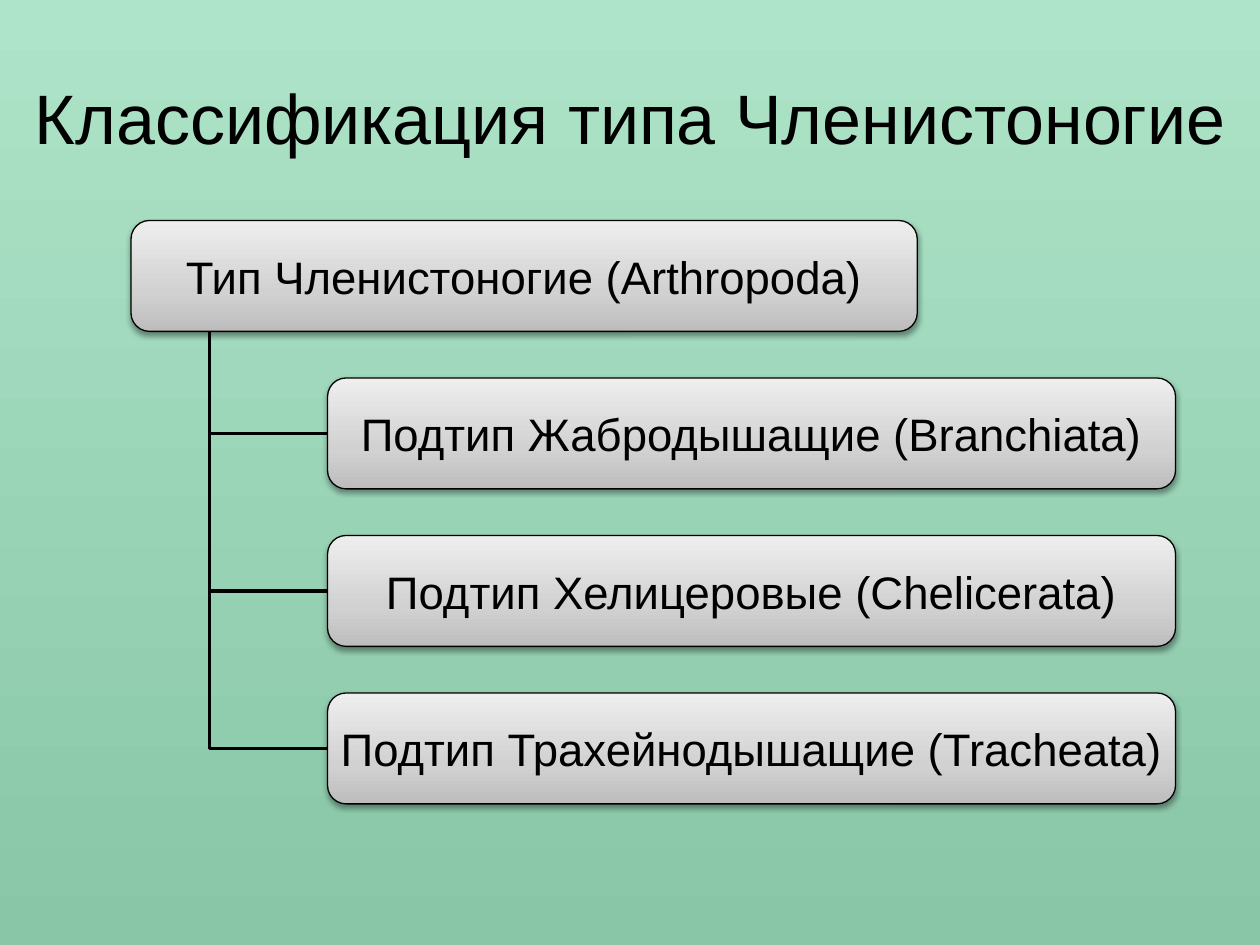
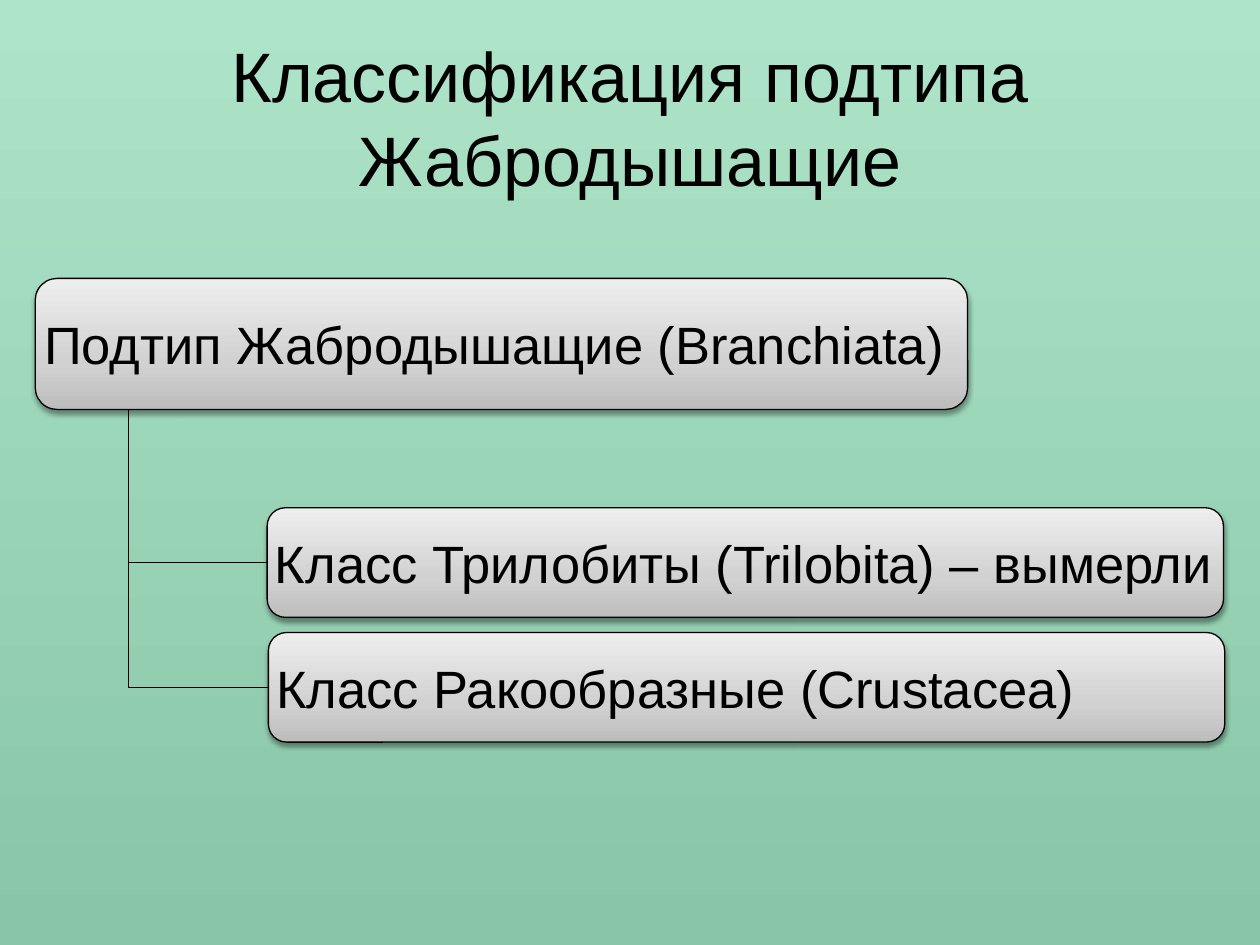
from copy import deepcopy

from lxml import etree
from pptx import Presentation
from pptx.dml.color import RGBColor
from pptx.enum import shapes, text
from pptx.oxml.ns import qn
from pptx.util import Inches, Pt

BLACK = RGBColor(0x00, 0x00, 0x00)
BACKDROP = [(0, RGBColor(0xAE, 0xE4, 0xC9)), (1, RGBColor(0x88, 0xC6, 0xA7))]
SILVER = [(0, RGBColor(0xBD, 0xBD, 0xBD)), (0.35, RGBColor(0xD1, 0xD1, 0xD1)),
          (1, RGBColor(0xEE, 0xEE, 0xEE))]
FONT = "Arial"
TITLE_ONLY = 5


def write_text(frame, words, size, align=text.PP_ALIGN.CENTER, inset=None):
    """Fill a text frame with one paragraph of black text, centred vertically."""
    frame.word_wrap = True
    frame.auto_size = text.MSO_AUTO_SIZE.NONE
    frame.vertical_anchor = text.MSO_ANCHOR.MIDDLE
    if inset is not None:
        frame.margin_left = frame.margin_right = Inches(inset)
        frame.margin_top = frame.margin_bottom = Inches(inset)
    para = frame.paragraphs[0]
    para.alignment = align
    span = para.add_run()
    span.text = words
    span.font.name, span.font.size = FONT, Pt(size)
    span.font.color.rgb = BLACK


def paint_gradient(fill, element, stops, angle):
    """Paint a linear gradient; the angle runs counter-clockwise."""
    fill.gradient()
    fill.gradient_angle = angle
    stop_list = next(element.iter(qn("a:gsLst")))
    while len(stop_list) < len(stops):
        stop_list.append(deepcopy(stop_list[-1]))
    for stop, (position, color) in zip(fill.gradient_stops, stops):
        stop.position = position
        stop.color.rgb = color


def add_soft_shadow(shape):
    shape.shadow.inherit = False
    effects = shape._element.spPr.find(qn("a:effectLst"))
    shadow = etree.SubElement(effects, qn("a:outerShdw"), blurRad=str(Pt(3.1)),
                              dist=str(Pt(1.6)), dir="5400000", rotWithShape="0")
    color = etree.SubElement(shadow, qn("a:srgbClr"), val=str(BLACK))
    etree.SubElement(color, qn("a:alpha"), val="38000")


def add_node(page, box, words, size, align):
    node = page.shapes.add_shape(shapes.MSO_SHAPE.ROUNDED_RECTANGLE,
                                 *[Inches(length) for length in box])
    paint_gradient(node.fill, node._element, SILVER, 90)
    node.line.color.rgb = BLACK
    node.line.width = Pt(0.75)
    add_soft_shadow(node)
    write_text(node.text_frame, words, size, align, inset=0.02)


def add_branch(page, root, child, width):
    """Draw an elbow from the root's underside to the child's left edge."""
    trunk, start = root[0] + root[2] / 10, root[1] + root[3]
    middle = child[1] + child[3] / 2
    builder = page.shapes.build_freeform(Inches(trunk), Inches(start))
    builder.add_line_segments([(Inches(trunk), Inches(middle)),
                               (Inches(child[0]), Inches(middle))], close=False)
    branch = builder.convert_to_shape()
    branch.fill.background()
    branch.line.color.rgb = BLACK
    branch.line.width = Pt(width)
    branch.shadow.inherit = False


def add_tree(page, root, children, size, align, line_width):
    """Root and children are (box, words); branches lie behind the nodes."""
    for box, _ in reversed(children):
        add_branch(page, root[0], box, line_width)
    for box, words in [root, *children]:
        add_node(page, box, words, size, align)


def add_page(deck, title, title_left):
    page = deck.slides.add_slide(deck.slide_layouts[TITLE_ONLY])
    heading = page.shapes.title
    heading.left, heading.top = Inches(title_left), Inches(0.3)
    heading.width, heading.height = deck.slide_width - 2 * heading.left, Inches(1.25)
    write_text(heading.text_frame, title, 40)
    return page


def main():
    deck = Presentation()
    deck.slide_width, deck.slide_height = Inches(10), Inches(7.5)
    master = deck.slide_master
    paint_gradient(master.background.fill, master._element, BACKDROP, 270)

    # Phylum and its subphyla
    page = add_page(deck, "Классификация типа Членистоногие", 0)
    subphyla = ["Подтип Жабродышащие (Branchiata)",
                "Подтип Хелицеровые (Chelicerata)",
                "Подтип Трахейнодышащие (Tracheata)"]
    add_tree(page, ((1.04, 1.75, 6.24, 0.88), "Тип Членистоногие (Arthropoda)"),
             [((2.6, 3 + 1.25 * row, 6.73, 0.88), words)
              for row, words in enumerate(subphyla)],
             size=26, align=text.PP_ALIGN.CENTER, line_width=2)

    # Subphylum and its classes
    page = add_page(deck, "Классификация подтипа Жабродышащие", 0.5)
    add_tree(page, ((0.28, 2.21, 7.4, 1.04), "Подтип Жабродышащие (Branchiata)"),
             [((2.12, 4.03, 7.59, 0.87), "Класс Трилобиты (Trilobita) – вымерли"),
              ((2.13, 5.02, 7.59, 0.87), "Класс Ракообразные (Crustacea)")],
             size=30, align=text.PP_ALIGN.LEFT, line_width=0.75)

    deck.save("out.pptx")


if __name__ == "__main__":
    main()
